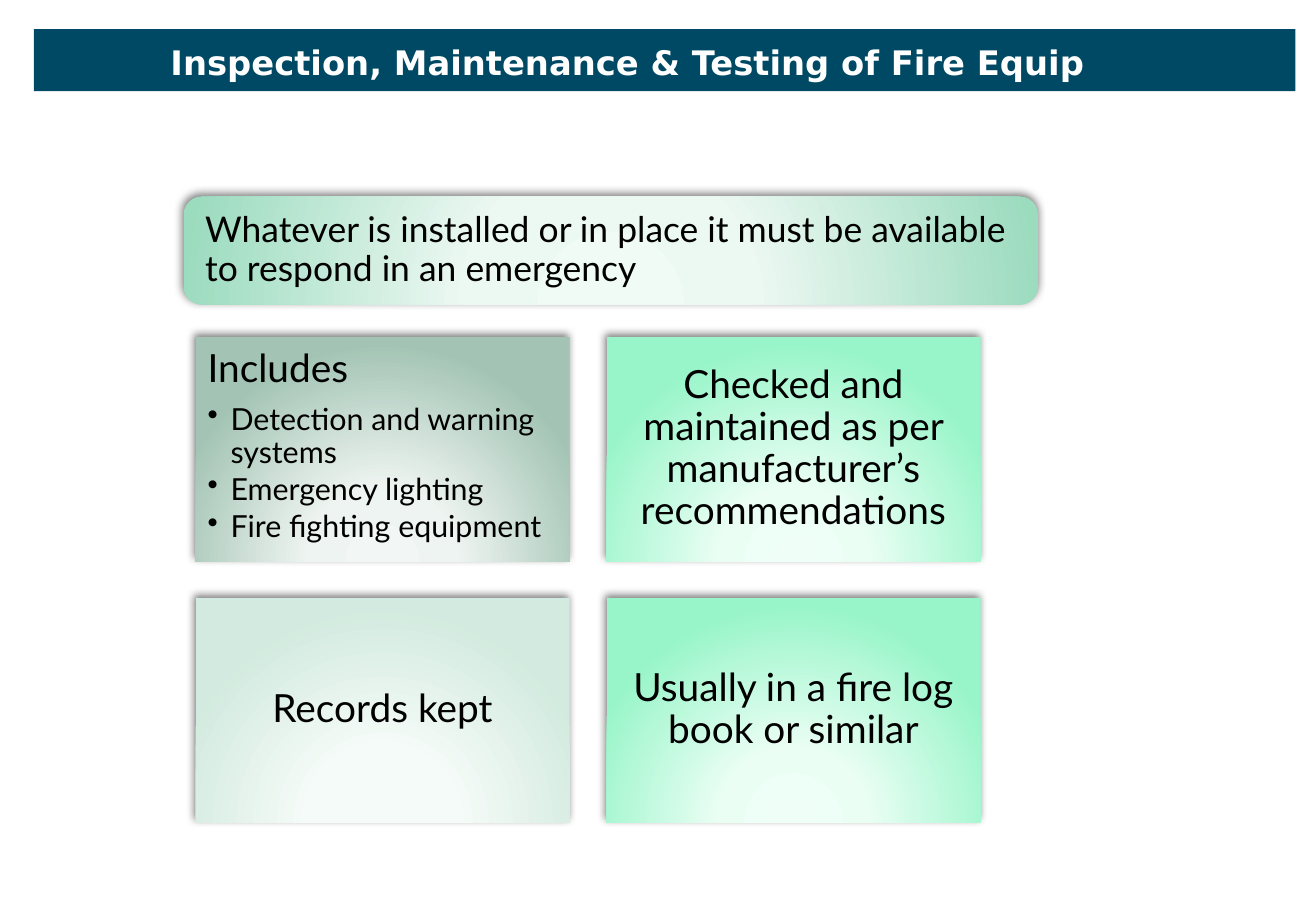
from pptx import Presentation
from pptx.dml.color import RGBColor
from pptx.enum.shapes import MSO_SHAPE
from pptx.enum.text import MSO_ANCHOR, MSO_AUTO_SIZE, PP_ALIGN
from pptx.oxml import parse_xml
from pptx.oxml.ns import nsdecls
from pptx.util import Cm, Pt

RECT, ROUNDED = MSO_SHAPE.RECTANGLE, MSO_SHAPE.ROUNDED_RECTANGLE
TOP, MIDDLE = MSO_ANCHOR.TOP, MSO_ANCHOR.MIDDLE
LEFT, CENTER = PP_ALIGN.LEFT, PP_ALIGN.CENTER

THEME = {
    "band": RGBColor.from_string("004964"),
    "title": {"name": "DejaVu Sans", "size": Pt(20), "bold": True},
    "title_color": RGBColor.from_string("FFFFFF"),
    "text_color": RGBColor.from_string("000000"),
    "font": "Lato",
    "statement": 21, "card": 23, "bullet": 18,
    # Gradient stops from the centre outwards
    "sage": ("F2F7F5", "EEF4F1", "A3C4B4"),
    "mint": ("EFFFF7", "EAFEF4", "98F5C9"),
    "pale": ("F7FCFA", "F5FBF8", "D2EADF"),
    "green": ("F0FBF6", "ECF8F2", "9BDBBE"),
}


def add_panel(kind, left, top, width, height, colors, inset, anchor):
    """Add a shape with a radial glow and a soft shadow; return its text frame."""
    sp = s.shapes.add_shape(kind, Cm(left), Cm(top), Cm(width), Cm(height))
    sp.line.fill.background()
    sp.shadow.inherit = False
    stops = "".join(f'<a:gs pos="{pos}"><a:srgbClr val="{color}"/></a:gs>'
                    for pos, color in zip((0, 34000, 100000), colors))
    spPr = sp.element.spPr
    spPr.find("{*}ln").addprevious(parse_xml(
        f'<a:gradFill {nsdecls("a")} rotWithShape="1"><a:gsLst>{stops}</a:gsLst>'
        '<a:path path="circle"><a:fillToRect l="50000" t="155000" r="50000" b="-55000"/>'
        '</a:path></a:gradFill>'))
    spPr.find("{*}effectLst").append(parse_xml(
        f'<a:outerShdw {nsdecls("a")} blurRad="63500" dist="25400" dir="14700000" '
        'algn="t" rotWithShape="0"><a:srgbClr val="000000"><a:alpha val="50000"/>'
        '</a:srgbClr></a:outerShdw>'))
    tf = sp.text_frame
    tf.word_wrap = True
    tf.vertical_anchor = anchor
    for side in ("left", "top", "right", "bottom"):
        setattr(tf, f"margin_{side}", Cm(inset))
    return tf


def write(p, text, size, align, after=0.35, bullet=False):
    """Fill a paragraph; the space after it is a share of the text size."""
    if bullet:
        p.level = 1
        pPr = p._p.get_or_add_pPr()
        pPr.set("marL", str(Cm(0.48)))
        pPr.set("indent", str(-Cm(0.48)))
        pPr.append(parse_xml(f'<a:buChar {nsdecls("a")} char="•"/>'))
    for key, value in {"alignment": align, "line_spacing": 0.9,
                       "space_after": Pt(round(size * after, 1))}.items():
        setattr(p, key, value)
    r = p.add_run()
    r.text = text
    for key, value in {"name": THEME["font"], "size": Pt(size)}.items():
        setattr(r.font, key, value)
    r.font.color.rgb = THEME["text_color"]


prs = Presentation()
prs.slide_width, prs.slide_height = Cm(27.51), Cm(19.05)
s = prs.slides.add_slide(prs.slide_layouts[5])

# Title band, behind the title
band = s.shapes.add_shape(RECT, Cm(0.71), Cm(0.61), Cm(26.37), Cm(1.3))
band.fill.solid()
band.fill.fore_color.rgb = THEME["band"]
band.line.fill.background()
band.shadow.inherit = False
s.shapes.title.element.addprevious(band.element)

# Title
title = s.shapes.title
for key, value in {"left": 3.25, "top": 0.74, "width": 19.74, "height": 1.12}.items():
    setattr(title, key, Cm(value))
tf = title.text_frame
tf.text = "Inspection, Maintenance & Testing of Fire Equip"
tf.word_wrap = False
tf.auto_size = MSO_AUTO_SIZE.NONE
tf.vertical_anchor = MIDDLE
p = tf.paragraphs[0]
p.alignment = CENTER
for key, value in THEME["title"].items():
    setattr(p.runs[0].font, key, value)
p.runs[0].font.color.rgb = THEME["title_color"]

# Grid of four cards: heading, bullets, colours
cards = [
    ("Includes", ["Detection and warning systems", "Emergency lighting",
                  "Fire fighting equipment"], "sage"),
    ("Checked and maintained as per manufacturer’s recommendations", [], "mint"),
    ("Records kept", [], "pale"),
    ("Usually in a fire log book or similar", [], "mint"),
]
for i, (heading, bullets, colors) in enumerate(cards):
    row, col = divmod(i, 2)
    tf = add_panel(RECT, 4.09 + col * 8.59, 7.04 + row * 5.46, 7.82, 4.7,
                   THEME[colors], 0.25, TOP if bullets else MIDDLE)
    write(tf.paragraphs[0], heading, THEME["card"], LEFT if bullets else CENTER)
    for text in bullets:
        write(tf.add_paragraph(), text, THEME["bullet"], LEFT, 0.15, bullet=True)

# Opening statement
tf = add_panel(ROUNDED, 3.84, 4.11, 17.86, 2.26, THEME["green"], 0.34, MIDDLE)
write(tf.paragraphs[0],
      "Whatever is installed or in place it must be available to respond in an emergency",
      THEME["statement"], LEFT)

prs.save("out.pptx")
